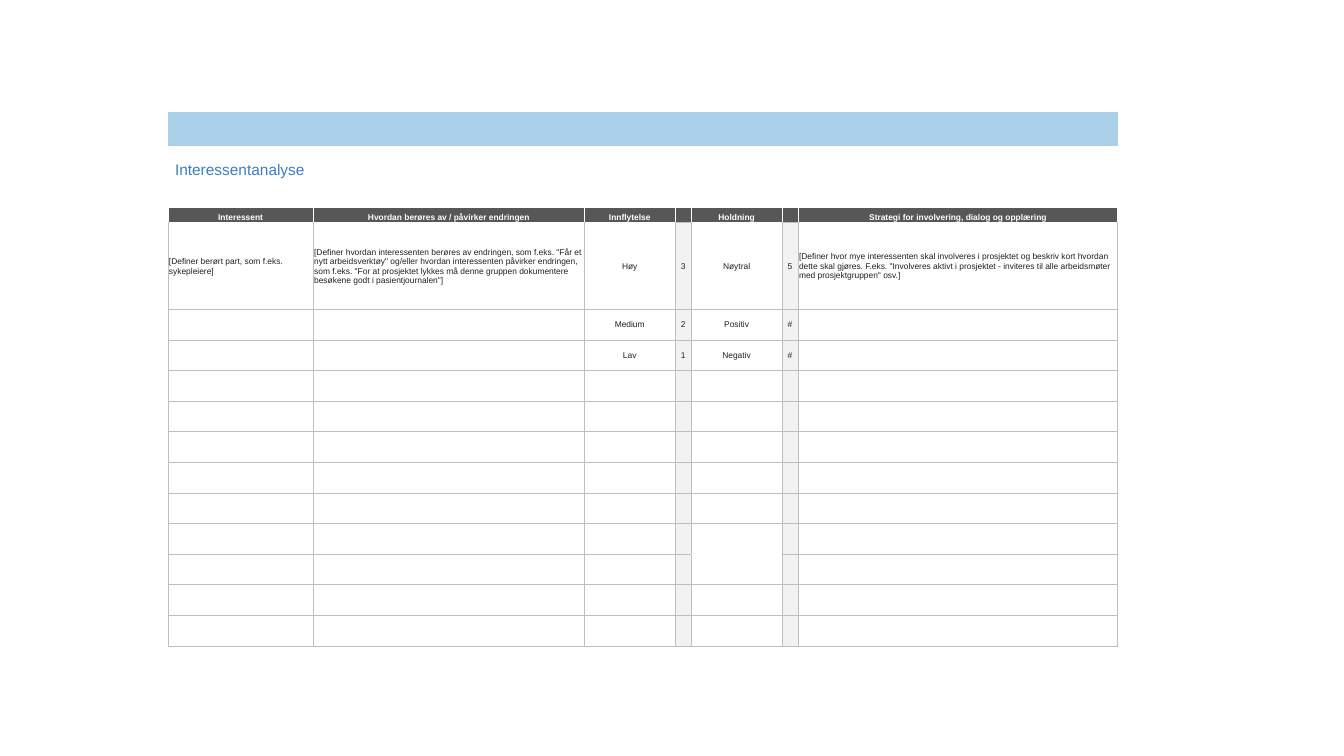
"""Build the stakeholder analysis slide with its table."""
import pptx
import pptx.dml.color
import pptx.enum.text
import pptx.oxml.ns
import pptx.util
from lxml import etree

Inches, Pt = pptx.util.Inches, pptx.util.Pt
qn = pptx.oxml.ns.qn
Anchor, Align = pptx.enum.text.MSO_ANCHOR, pptx.enum.text.PP_ALIGN

WHITE, GREY, PALE, DARK = "FFFFFF", "BFBFBF", "F2F2F2", "575757"
BAND, BLUE, INK = "ABD0EA", "3A7EC0", "202020"
WIDE, HIGH = 13.33, 7.5
TITLE, GAP, HEAD, FIRST, SPLIT = 2, 3, 4, 5, 13
SCORES = (3, 5)
COUNT = 17

cols = [1.44, 2.69, 0.9, 0.16, 0.9, 0.16, 3.17]
rows = [0.34, 0.14, 0.26, 0.21, 0.15, 0.86]
rows += [(5.3 - sum(rows)) / (COUNT - len(rows))] * (COUNT - len(rows))

texts = {
    TITLE: ["Interessentanalyse"],
    HEAD: ["Interessent", "Hvordan berøres av / påvirker endringen", "Innflytelse", "",
           "Holdning", "", "Strategi for involvering, dialog og opplæring"],
    FIRST: [
        "[Definer berørt part, som f.eks. sykepleiere]",
        "[Definer hvordan interessenten berøres av endringen, som f.eks. \"Får et nytt "
        "arbeidsverktøy\" og/eller hvordan interessenten påvirker endringen, som f.eks. "
        "\"For at prosjektet lykkes må denne gruppen dokumentere besøkene godt i "
        "pasientjournalen\"]",
        "Høy", "3", "Nøytral", "5",
        "[Definer hvor mye interessenten skal involveres i prosjektet og beskriv kort hvordan "
        "dette skal gjøres. F.eks. \"Involveres aktivt i prosjektet - inviteres til alle "
        "arbeidsmøter med prosjektgruppen\" osv.]"],
    6: ["", "", "Medium", "2", "Positiv", "#", ""],
    7: ["", "", "Lav", "1", "Negativ", "#", ""],
}


def paint(fill, tone):
    fill.solid()
    fill.fore_color.rgb = pptx.dml.color.RGBColor.from_string(tone)


def edge(cell, side, tone):
    line = etree.SubElement(cell._tc.get_or_add_tcPr(), qn("a:ln" + side), w=str(Pt(0.5)))
    if tone:
        fill = etree.SubElement(line, qn("a:solidFill"))
        etree.SubElement(fill, qn("a:srgbClr"), val=tone)
    else:
        etree.SubElement(line, qn("a:noFill"))


deck = pptx.Presentation()
deck.slide_width, deck.slide_height = Inches(WIDE), Inches(HIGH)
slide = deck.slides.add_slide(deck.slide_layouts[6])
frame = slide.shapes.add_table(COUNT, len(cols), Inches(WIDE / 8), Inches(1.11),
                               Inches(sum(cols)), Inches(sum(rows)))
table = frame.table
table.first_row = table.horz_banding = False
for col, width in zip(table.columns, cols):
    col.width = Inches(width)
for row, height in zip(table.rows, rows):
    row.height = Inches(height)
table.cell(0, 0).merge(table.cell(0, len(cols) - 1))
table.cell(TITLE, 0).merge(table.cell(TITLE, 1))

for r in range(COUNT):
    for c in range(len(cols)):
        cell = table.cell(r, c)
        score = c in SCORES
        base = None if r < HEAD else WHITE if r == HEAD else GREY
        tones = dict.fromkeys("LRTB", base)
        if r == GAP or (r == SPLIT and c == 4):
            tones["B"] = WHITE
        if (r == FIRST and not score) or (r == SPLIT + 1 and c == 4):
            tones["T"] = WHITE
        if r == HEAD and score:
            tones["B"] = GREY
        for side, tone in tones.items():
            edge(cell, side, tone)

        if r == 0:
            paint(cell.fill, BAND)
        elif r < HEAD:
            cell.fill.background()
        else:
            paint(cell.fill, DARK if r == HEAD else PALE if score else WHITE)

        cell.margin_left = Inches(0.07 if r == TITLE and c == 0 else 0.01)
        cell.margin_right = cell.margin_top = Inches(0.01)
        cell.margin_bottom = 0
        if r != TITLE:
            cell.vertical_anchor = Anchor.BOTTOM if r == HEAD else Anchor.MIDDLE
        para = cell.text_frame.paragraphs[0]
        if r == HEAD or (r > HEAD and 2 <= c <= 5):
            para.alignment = Align.CENTER
        line = texts.get(r, [])
        if c < len(line) and line[c]:
            para.text = line[c]
            font = para.runs[0].font
            font.name = "Arial"
            font.size = Pt(11 if r == TITLE else 6)
            font.bold = r == HEAD
            paint(font.fill, BLUE if r == TITLE else WHITE if r == HEAD else INK)
        else:
            etree.SubElement(para._p, qn("a:endParaRPr"), sz="600")

deck.save("out.pptx")
